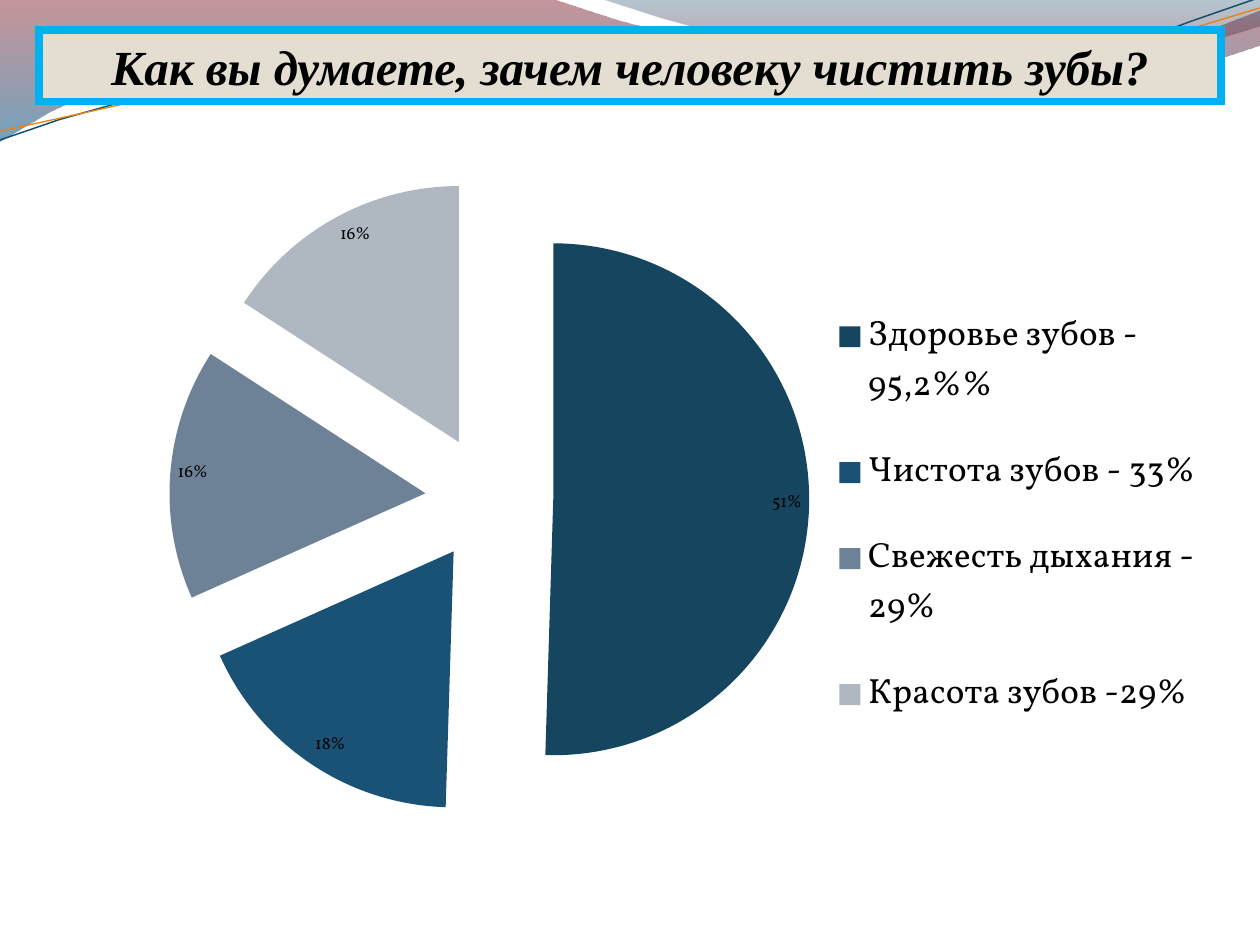
from lxml import etree
from pptx import Presentation
from pptx.chart.data import CategoryChartData
from pptx.dml.color import RGBColor
from pptx.enum.chart import XL_CHART_TYPE, XL_LABEL_POSITION, XL_LEGEND_POSITION
from pptx.enum.text import MSO_ANCHOR, PP_ALIGN
from pptx.oxml.ns import qn
from pptx.util import Pt

PIE = XL_CHART_TYPE.PIE
EDGE = XL_LABEL_POSITION.INSIDE_END
RIGHT = XL_LEGEND_POSITION.RIGHT
MIDDLE = MSO_ANCHOR.MIDDLE
CENTER = PP_ALIGN.CENTER

STEPS = 4
BANDS = [
    ([(0, 0), (317, 0), (343, 12, 478, 45, 546, 45),
      (614, 45, 690, 19, 720, 6), (720, 26),
      (708, 32, 626, 55, 537, 54), (448, 54, 275, 20, 185, 24.5),
      (93, 26, 33, 60, 0, 81)],
     [(0, "7E1621", 45), (1, "005689", 55)]),
    ([(345, 0), (366, 8, 491, 45, 554, 47),
      (616, 50, 692, 23, 720, 15), (720, 0)],
     [(0, "094467", 30), (0.8, "A10F1F", 45)]),
]
WAVES = [
    ([(0, 80), (35, 67, 114, 41, 199, 37.5),
      (284, 34, 427, 64, 513, 57.5), (600, 51, 675, 11, 720, -1.5)],
     "184E6D", 0.85),
    ([(0, 75), (34, 69, 118, 44, 204, 40.5),
      (290, 37, 430, 60.5, 516, 54), (602, 48, 678, 15, 720, 4.5)],
     "F07F09", 0.75),
]
SLICES = [
    ("Здоровье зубов - 95,2%%", 51, "164560"),
    ("Чистота зубов - 33%", 18, "1A5275"),
    ("Свежесть дыхания - 29%", 16, "6E8297"),
    ("Красота зубов -29%", 16, "AFB7C1"),
]


def color(code):
    return RGBColor.from_string(code)


def trace(parts):
    dots = [parts[0]]
    for part in parts[1:]:
        if len(part) == 2:
            dots.append(part)
            continue
        start = dots[-1]
        for step in range(1, STEPS + 1):
            t = step / STEPS
            u = 1 - t
            dots.append(tuple(
                u**3 * start[i] + 3 * u * u * t * part[i]
                + 3 * u * t * t * part[i + 2] + t**3 * part[i + 4]
                for i in (0, 1)))
    return dots


def add_path(slide, box, parts, close):
    left, top = box[:2]
    dots = [(Pt(left + x), Pt(top + y)) for x, y in trace(parts)]
    pen = slide.shapes.build_freeform(*dots[0])
    pen.add_line_segments(dots[1:], close=close)
    shape = pen.convert_to_shape()
    shape.shadow.inherit = False
    return shape


def add_header(slide, box):
    for parts, stops in BANDS:
        band = add_path(slide, box, parts, True)
        band.line.fill.background()
        band.fill.gradient()
        band.fill.gradient_angle = 270
        for stop, (place, code, _) in zip(band.fill.gradient_stops, stops):
            stop.position = place
            stop.color.rgb = color(code)
        for node, (_, _, alpha) in zip(band.element.iter(qn("a:srgbClr")), stops):
            etree.SubElement(node, qn("a:alpha"), val=str(alpha * 1000))
    for parts, code, width in WAVES:
        wave = add_path(slide, box, parts, False)
        wave.fill.background()
        wave.line.color.rgb = color(code)
        wave.line.width = Pt(width)


def add_title(slide, box):
    title = slide.shapes.title
    title.left, title.top, title.width, title.height = map(Pt, box)
    title.fill.solid()
    title.fill.fore_color.rgb = color("E3DED1")
    title.line.color.rgb = color("00B0F0")
    title.line.width = Pt(4.5)
    rim = title.element.find(".//" + qn("a:ln"))
    etree.SubElement(rim, qn("a:miter"), lim="800000")
    frame = title.text_frame
    frame.text = "Как вы думаете, зачем человеку чистить зубы?"
    frame.vertical_anchor = MIDDLE
    frame.paragraphs[0].alignment = CENTER
    font = frame.paragraphs[0].runs[0].font
    font.name, font.size = "Times New Roman", Pt(28)
    font.bold = font.italic = True
    font.color.rgb = color("000000")
    tree = title.element.getparent()
    tree.append(title.element)


def set_area(node, index, area, inner=False):
    for old in node.findall(qn("c:layout")):
        node.remove(old)
    layout = etree.Element(qn("c:layout"))
    manual = etree.SubElement(layout, qn("c:manualLayout"))
    rows = [("layoutTarget", "inner")] if inner else []
    rows += [("xMode", "edge"), ("yMode", "edge")]
    rows += zip("xywh", map(str, area))
    for tag, value in rows:
        etree.SubElement(manual, qn("c:" + tag), val=value)
    node.insert(index, layout)


def add_pie(slide, box):
    data = CategoryChartData()
    data.categories = [name for name, _, _ in SLICES]
    data.add_series("Series 1", [value for _, value, _ in SLICES])
    chart = slide.shapes.add_chart(PIE, *map(Pt, box), data).chart
    chart.has_title = False
    chart.font.name, chart.font.size = "Vollkorn", Pt(10)
    chart.font.color.rgb = color("000000")

    plot = chart.plots[0]
    plot.vary_by_categories = True
    series = plot.series[0]
    for i, (_, _, code) in enumerate(SLICES):
        fill = series.points[i].format.fill
        fill.solid()
        fill.fore_color.rgb = color(code)
    burst = etree.Element(qn("c:explosion"), val="25")
    series._element.find(qn("c:dPt")).addprevious(burst)

    plot.has_data_labels = True
    labels = plot.data_labels
    labels.show_value = True
    labels.number_format = '0"%"'
    labels.number_format_is_linked = False
    labels.position = EDGE

    chart.has_legend = True
    legend = chart.legend
    legend.position = RIGHT
    legend.include_in_layout = False
    legend.font.name, legend.font.size = "Vollkorn", Pt(20)
    legend.font.color.rgb = color("000000")
    set_area(legend._element, 1, (0.67, 0.17, 0.31, 0.69))
    area = chart._chartSpace.find(".//" + qn("c:plotArea"))
    set_area(area, 0, (0, 0.03, 0.75, 0.92), True)


def main():
    deck = Presentation()
    deck.slide_width, deck.slide_height = Pt(720), Pt(540)
    slide = deck.slides.add_slide(deck.slide_layouts[5])
    add_header(slide, (0, 0, 720, 82))
    add_title(slide, (22.5, 17, 675, 41))
    add_pie(slide, (28, 90, 671, 397.5))
    deck.save("out.pptx")


if __name__ == "__main__":
    main()
